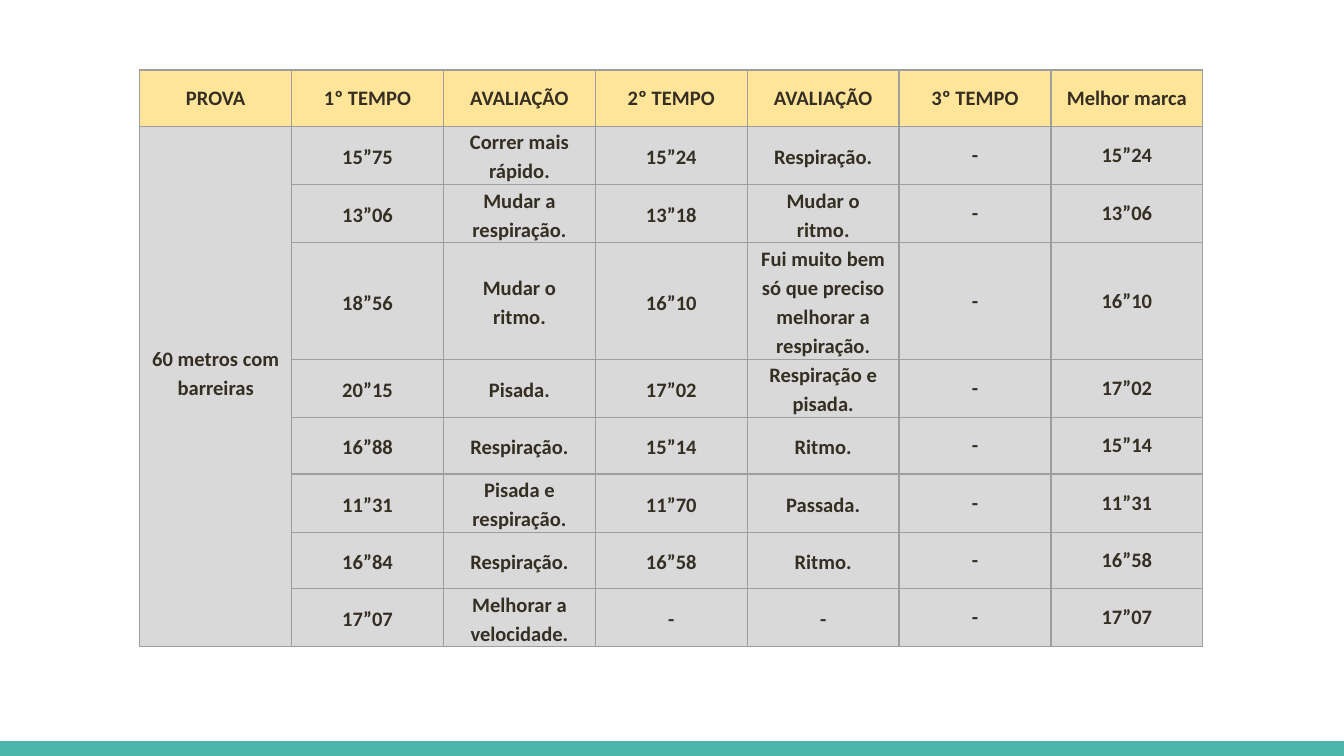
from typing import NamedTuple

from lxml import etree
from pptx import Presentation
from pptx.dml.color import RGBColor
from pptx.enum.shapes import MSO_SHAPE
from pptx.enum.text import MSO_ANCHOR, PP_ALIGN
from pptx.oxml.ns import qn
from pptx.util import Inches, Pt

RECT = MSO_SHAPE.RECTANGLE
MIDDLE = MSO_ANCHOR.MIDDLE
CENTER = PP_ALIGN.CENTER

COLORS = {
    "band": "4DB6AC",
    "head": "FFE599",
    "body": "D9D9D9",
    "edge": "9E9E9E",
    "text": "342E23",
}
FONT = "Calibri"
SIZE = 11
WIDE = Inches(10)
HIGH = WIDE * 9 // 16
COL = 1.13
ROW = 0.42
LOOSE = 1.15


class Trial(NamedTuple):
    first: str
    note: str
    second: str
    advice: str
    third: str
    best: str


HEADS = ["PROVA", "1º TEMPO", "AVALIAÇÃO", "2º TEMPO", "AVALIAÇÃO",
         "3º TEMPO", "Melhor marca"]
EVENT = "60 metros com barreiras"
TRIALS = [
    Trial("15”75", "Correr mais rápido.", "15”24", "Respiração.", "-", "15”24"),
    Trial("13”06", "Mudar a respiração.", "13”18", "Mudar o ritmo.", "-", "13”06"),
    Trial("18”56", "Mudar o ritmo.", "16”10",
          "Fui muito bem só que preciso melhorar a respiração.", "-", "16”10"),
    Trial("20”15", "Pisada.", "17”02", "Respiração e pisada.", "-", "17”02"),
    Trial("16”88", "Respiração.", "15”14", "Ritmo.", "-", "15”14"),
    Trial("11”31", "Pisada e respiração.", "11”70", "Passada.", "-", "11”31"),
    Trial("16”84", "Respiração.", "16”58", "Ritmo.", "-", "16”58"),
    Trial("17”07", "Melhorar a velocidade.", "-", "-", "-", "17”07"),
]


def color(name: str) -> RGBColor:
    return RGBColor.from_string(COLORS[name])


def frame(cell) -> None:
    props = cell._tc.get_or_add_tcPr()
    for side in ("a:lnL", "a:lnR", "a:lnT", "a:lnB"):
        line = etree.SubElement(props, qn(side), w=str(Pt(0.75)))
        fill = etree.SubElement(line, qn("a:solidFill"))
        etree.SubElement(fill, qn("a:srgbClr"), val=COLORS["edge"])


def style(cell, fill: str) -> None:
    frame(cell)
    cell.fill.solid()
    cell.fill.fore_color.rgb = color(fill)
    cell.vertical_anchor = MIDDLE
    cell.margin_left = cell.margin_right = Inches(0.08)
    cell.margin_top = cell.margin_bottom = 0


def write(cell, text: str, space: float = 1.0) -> None:
    para = cell.text_frame.paragraphs[0]
    para.alignment = CENTER
    para.line_spacing = space
    run = para.add_run()
    run.text = text
    run.font.name = FONT
    run.font.size = Pt(SIZE)
    run.font.bold = True
    run.font.color.rgb = color("text")


def draw_band(slide) -> None:
    tall = Inches(0.11)
    band = slide.shapes.add_shape(RECT, 0, HIGH - tall, WIDE, tall)
    band.shadow.inherit = False
    band.fill.solid()
    band.fill.fore_color.rgb = color("band")
    band.line.fill.background()


def draw_table(slide) -> None:
    rows, cols = len(TRIALS) + 1, len(HEADS)
    table = slide.shapes.add_table(
        rows, cols, Inches(1.04), Inches(0.52),
        Inches(COL * cols), Inches(ROW * rows)).table
    table.first_row = False
    table.horz_banding = False
    for col in table.columns:
        col.width = Inches(COL)
    for row in table.rows:
        row.height = Inches(ROW)

    for r in range(rows):
        for c in range(cols):
            style(table.cell(r, c), "body" if r else "head")

    for c, head in enumerate(HEADS):
        write(table.cell(0, c), head)

    event = table.cell(1, 0)
    event.merge(table.cell(rows - 1, 0))
    event.margin_bottom = Inches(0.22)
    write(event, EVENT, LOOSE)

    for r, trial in enumerate(TRIALS, 1):
        for c, text in enumerate(trial, 1):
            write(table.cell(r, c), text, LOOSE if c < 5 else 1.0)


def main() -> None:
    deck = Presentation()
    deck.slide_width = WIDE
    deck.slide_height = HIGH
    slide = deck.slides.add_slide(deck.slide_layouts[6])
    draw_band(slide)
    draw_table(slide)
    deck.save("out.pptx")


if __name__ == "__main__":
    main()
